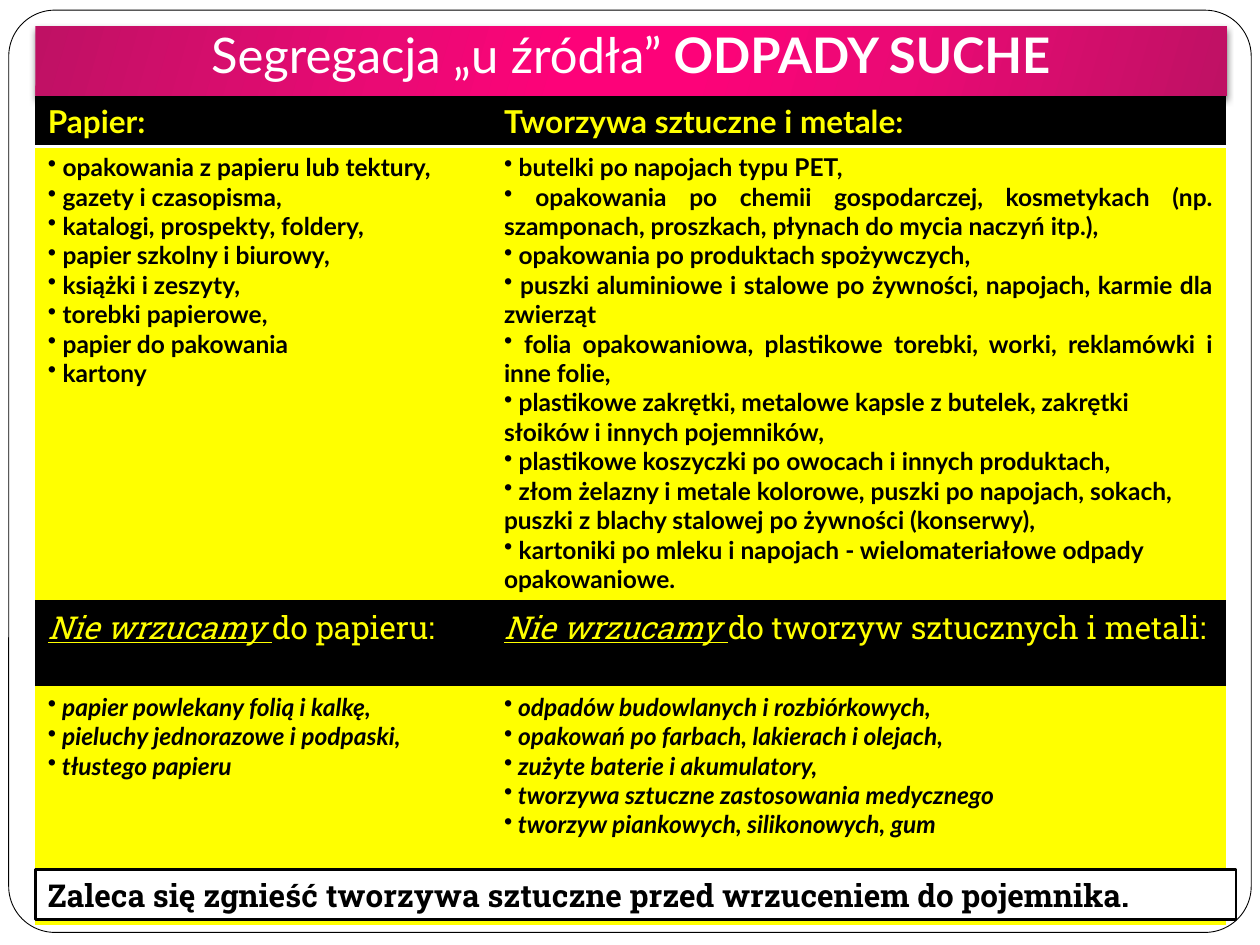
import dataclasses

import pptx
import pptx.dml.color
import pptx.enum.shapes
import pptx.enum.text
import pptx.oxml
import pptx.oxml.ns
import pptx.util

Pt = pptx.util.Pt
qn = pptx.oxml.ns.qn
ALIGN = pptx.enum.text.PP_ALIGN
ANCHOR = pptx.enum.text.MSO_ANCHOR
FIT = pptx.enum.text.MSO_AUTO_SIZE
SHAPE = pptx.enum.shapes.MSO_SHAPE
NAMESPACE = pptx.oxml.ns.nsdecls("a")


@dataclasses.dataclass(frozen=True)
class Theme:
    black: str = "000000"
    white: str = "FFFFFF"
    yellow: str = "FFFF00"
    pinks: tuple = ((0, "BF1164"), (30, "EA0A74"), (45, "FD0279"),
                    (55, "FD0279"), (73, "EA0A74"), (100, "BF1164"))
    sans: str = "Lato"
    slab: str = "Roboto Slab"
    title_size: float = 28
    heading_size: float = 18
    body_size: float = 14
    no_grid_style: str = "{2D5ABB26-0587-4C30-8999-92F81FD0307C}"


def rgb(value):
    return pptx.dml.color.RGBColor.from_string(value)


def add_text(paragraph, text, *, font, size, color, bold=False, italic=False,
             underline=False, align=ALIGN.LEFT):
    paragraph.alignment = align
    run = paragraph.add_run()
    run.text = text
    run.font.name = font
    run.font.size = Pt(size)
    run.font.color.rgb = rgb(color)
    run.font.bold = bold
    run.font.italic = italic
    run.font.underline = underline


def add_bullet(paragraph):
    properties = paragraph._p.get_or_add_pPr()
    properties.set("marL", "0")
    properties.set("indent", "0")
    properties.append(pptx.oxml.parse_xml(f'<a:buChar {NAMESPACE} char="•"/>'))


class SlideBuilder:
    def __init__(self, slide, theme):
        self.slide = slide
        self.theme = theme

    def box(self, kind, bounds, line_width):
        shape = self.slide.shapes.add_shape(kind, *map(Pt, bounds))
        shape.shadow.inherit = False
        shape.fill.solid()
        shape.fill.fore_color.rgb = rgb(self.theme.white)
        shape.line.color.rgb = rgb(self.theme.black)
        shape.line.width = Pt(line_width)
        return shape

    def frame(self, bounds):
        self.box(SHAPE.ROUNDED_RECTANGLE, bounds, 0.5).adjustments[0] = 0.05

    def title(self, bounds, plain, strong):
        title = self.slide.shapes.title
        title.left, title.top, title.width, title.height = map(Pt, bounds)
        title.element.getparent().append(title.element)
        title.fill.gradient()
        gradient = title.element.spPr.find(qn("a:gradFill"))
        stops = "".join(
            f'<a:gs pos="{position * 1000}"><a:srgbClr val="{color}"/></a:gs>'
            for position, color in self.theme.pinks)
        gradient.replace(gradient.find(qn("a:gsLst")), pptx.oxml.parse_xml(
            f"<a:gsLst {NAMESPACE}>{stops}</a:gsLst>"))
        gradient.find(qn("a:lin")).set("ang", str(16 * 60000))
        title.shadow.inherit = False
        title.element.spPr.find(qn("a:effectLst")).append(pptx.oxml.parse_xml(
            f'<a:outerShdw {NAMESPACE} blurRad="{Pt(4)}" dist="{Pt(2)}" '
            f'dir="5400000" rotWithShape="0"><a:srgbClr val="{self.theme.black}">'
            '<a:alpha val="50000"/></a:srgbClr></a:outerShdw>'))
        text = title.text_frame
        text.auto_size = FIT.NONE
        text.word_wrap = True
        text.vertical_anchor = ANCHOR.BOTTOM
        text.margin_left = text.margin_right = text.margin_bottom = Pt(7.2)
        text.margin_top = Pt(3.6)
        look = dict(font=self.theme.sans, size=self.theme.title_size,
                    color=self.theme.white, align=ALIGN.CENTER)
        add_text(text.paragraphs[0], plain, **look)
        add_text(text.paragraphs[0], strong, bold=True, **look)

    def table(self, left, top, widths, heights):
        holder = self.slide.shapes.add_table(
            len(heights), len(widths), Pt(left), Pt(top),
            Pt(sum(widths)), Pt(sum(heights)))
        table = holder.table
        table.first_row = table.horz_banding = False
        for style in holder.element.iter(qn("a:tableStyleId")):
            style.text = self.theme.no_grid_style
        for column, width in zip(table.columns, widths):
            column.width = Pt(width)
        for row, height in zip(table.rows, heights):
            row.height = Pt(height)
        return table

    def fill_cell(self, cell, color):
        cell.fill.solid()
        cell.fill.fore_color.rgb = rgb(color)
        return cell.text_frame

    def category(self, cell, heading):
        text = self.fill_cell(cell, self.theme.black)
        add_text(text.paragraphs[0], heading, font=self.theme.sans,
                 size=self.theme.heading_size, color=self.theme.yellow, bold=True)
        cell._tc.get_or_add_tcPr().insert(0, pptx.oxml.parse_xml(
            f'<a:lnB {NAMESPACE} w="{Pt(2)}"><a:solidFill>'
            f'<a:srgbClr val="{self.theme.white}"/></a:solidFill></a:lnB>'))

    def exclusion(self, cell, target):
        text = self.fill_cell(cell, self.theme.black)
        look = dict(font=self.theme.slab, size=self.theme.heading_size,
                    color=self.theme.yellow)
        add_text(text.paragraphs[0], "Nie wrzucamy ", italic=True,
                 underline=True, **look)
        add_text(text.paragraphs[0], target, **look)

    def items(self, cell, entries, italic=False, justified=0):
        text = self.fill_cell(cell, self.theme.yellow)
        for index, entry in enumerate(entries):
            paragraph = text.add_paragraph() if index else text.paragraphs[0]
            add_text(paragraph, f" {entry}", font=self.theme.sans,
                     size=self.theme.body_size, color=self.theme.black,
                     bold=True, italic=italic,
                     align=ALIGN.JUSTIFY if index < justified else ALIGN.LEFT)
            add_bullet(paragraph)

    def advice(self, bounds, sentence):
        text = self.box(SHAPE.RECTANGLE, bounds, 1.5).text_frame
        text.word_wrap = True
        text.auto_size = FIT.SHAPE_TO_FIT_TEXT
        text.vertical_anchor = ANCHOR.TOP
        add_text(text.paragraphs[0], sentence, font=self.theme.slab,
                 size=self.theme.heading_size, color=self.theme.black, bold=True)


WASTE = [
    dict(
        heading="Papier:",
        accepted=["opakowania z papieru lub tektury,", "gazety i czasopisma,",
                  "katalogi, prospekty, foldery,", "papier szkolny i biurowy,",
                  "książki i zeszyty,", "torebki papierowe,",
                  "papier do pakowania", "kartony"],
        justified=0,
        target="do papieru:",
        rejected=["papier powlekany folią i kalkę,",
                  "pieluchy jednorazowe i podpaski,", "tłustego papieru"]),
    dict(
        heading="Tworzywa sztuczne i metale:",
        accepted=["butelki po napojach typu PET,",
                  "opakowania po chemii gospodarczej, kosmetykach (np. szamponach, "
                  "proszkach, płynach do mycia naczyń itp.),",
                  "opakowania po produktach spożywczych,",
                  "puszki aluminiowe i stalowe po żywności, napojach, karmie dla zwierząt",
                  "folia opakowaniowa, plastikowe torebki, worki, reklamówki i inne folie,",
                  "plastikowe zakrętki, metalowe kapsle z butelek, zakrętki słoików "
                  "i innych pojemników,",
                  "plastikowe koszyczki po owocach i innych produktach,",
                  "złom żelazny i metale kolorowe, puszki po napojach, sokach, "
                  "puszki z blachy stalowej po żywności (konserwy),",
                  "kartoniki po mleku i napojach - wielomateriałowe odpady opakowaniowe."],
        justified=5,
        target="do tworzyw sztucznych i metali:",
        rejected=["odpadów budowlanych i rozbiórkowych,",
                  "opakowań po farbach, lakierach i olejach,",
                  "zużyte baterie i akumulatory,",
                  "tworzywa sztuczne zastosowania medycznego",
                  "tworzyw piankowych, silikonowych, gum"]),
]


def main():
    deck = pptx.Presentation()
    deck.slide_width, deck.slide_height = Pt(720), Pt(540)
    builder = SlideBuilder(deck.slides.add_slide(deck.slide_layouts[5]), Theme())
    left = 20.2
    builder.frame((5, 5.8, 710, 527))
    sorting = builder.table(left, 54.7, (260.6, 419.8), (28.1, 251.3, 49, 136.8))
    for column, waste in enumerate(WASTE):
        builder.category(sorting.cell(0, column), waste["heading"])
        builder.items(sorting.cell(1, column), waste["accepted"],
                      justified=waste["justified"])
        builder.exclusion(sorting.cell(2, column), waste["target"])
        builder.items(sorting.cell(3, column), waste["rejected"], italic=True)
    builder.title((left, 15.1, 680.4, 39.6), "Segregacja „u źródła” ", "ODPADY SUCHE")
    builder.advice((left, 496.8, 686.2, 28.8),
                   "Zaleca się zgnieść tworzywa sztuczne przed wrzuceniem do pojemnika.")
    deck.save("out.pptx")


if __name__ == "__main__":
    main()
